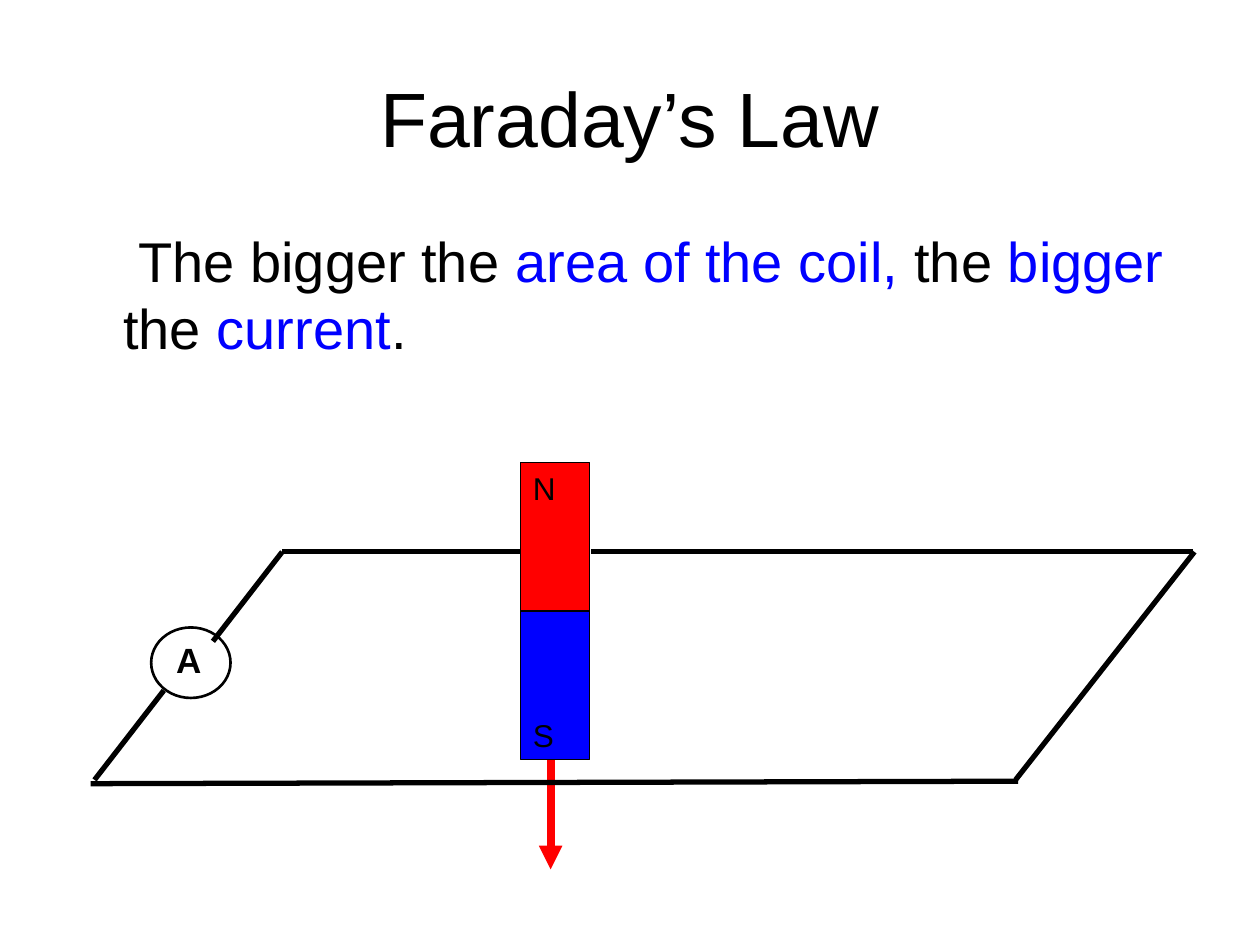
from lxml.etree import SubElement
from pptx import Presentation
from pptx.dml.color import RGBColor
from pptx.enum.shapes import MSO_CONNECTOR, MSO_SHAPE
from pptx.enum.text import MSO_ANCHOR, PP_ALIGN
from pptx.oxml.ns import qn
from pptx.util import Inches, Pt

BLACK = RGBColor(0, 0, 0)
RED = RGBColor(255, 0, 0)
BLUE = RGBColor(0, 0, 255)
FONT = "Arial"


def add_text(slide, box, runs, size, bold=False, before=0,
             align=PP_ALIGN.LEFT, anchor=MSO_ANCHOR.TOP):
    """Add a one-paragraph text box from (text, colour) runs."""
    frame = slide.shapes.add_textbox(*map(Inches, box)).text_frame
    frame.word_wrap = True
    frame.vertical_anchor = anchor
    paragraph = frame.paragraphs[0]
    paragraph.alignment = align
    paragraph.space_before = Pt(before)
    for text, color in runs:
        run = paragraph.add_run()
        run.text = text
        run.font.name = FONT
        run.font.size = Pt(size)
        run.font.bold = bold
        run.font.color.rgb = color
    return paragraph


def add_outlined(slide, preset, box, width, fill=None):
    """Add a black-outlined shape, hollow unless a fill is given."""
    shape = slide.shapes.add_shape(preset, *map(Inches, box))
    shape.shadow.inherit = False
    if fill is None:
        shape.fill.background()
    else:
        shape.fill.solid()
        shape.fill.fore_color.rgb = fill
    shape.line.color.rgb = BLACK
    shape.line.width = Pt(width)


def add_line(slide, start, end, color=BLACK, width=3, arrow=False):
    """Add a straight line, with an arrowhead at its end if asked."""
    line = slide.shapes.add_connector(
        MSO_CONNECTOR.STRAIGHT, *map(Inches, (*start, *end)))
    line.line.color.rgb = color
    line.line.width = Pt(width)
    if arrow:
        SubElement(line.line._get_or_add_ln(), qn("a:tailEnd"), type="triangle")
    SubElement(line._element.spPr, qn("a:effectLst"))


def add_magnet(slide):
    """Add the bar magnet: two equal poles with their letters."""
    left, top, width, pole_height, label_height = 4.13, 3.67, 0.55, 1.18, 0.4
    middle = top + pole_height
    bottom = middle + pole_height
    for pole_top, color in ((top, RED), (middle, BLUE)):
        add_outlined(slide, MSO_SHAPE.RECTANGLE,
                     (left, pole_top, width, pole_height), 0.75, color)
    for label_top, letter in ((top, "N"), (bottom - label_height, "S")):
        add_text(slide, (left, label_top, width, label_height),
                 [(letter, BLACK)], 18, before=2)


def add_ammeter(slide):
    """Add the ammeter in the left side of the coil."""
    add_outlined(slide, MSO_SHAPE.OVAL, (1.2, 4.98, 0.63, 0.56), 1.5)
    add_text(slide, (1.3, 5.02, 0.63, 0.43), [("A", BLACK)], 20,
             bold=True, before=2)


def main():
    prs = Presentation()
    prs.slide_width, prs.slide_height = Inches(10), Inches(7.5)
    slide = prs.slides.add_slide(prs.slide_layouts[6])

    # Direction of the magnet's motion
    add_line(slide, (4.37, 6.03), (4.37, 6.9), RED, 4.5, arrow=True)

    # Title and statement of the law
    add_text(slide, (0.5, 0.3, 9, 1.25), [("Faraday’s Law", BLACK)], 44,
             align=PP_ALIGN.CENTER, anchor=MSO_ANCHOR.MIDDLE)
    statement = add_text(slide, (0.5, 1.75, 9, 4.95), [
        ("The bigger the", BLACK),
        (" area of the coil, ", BLUE),
        ("the", BLACK),
        (" bigger ", BLUE),
        ("the ", BLACK),
        ("current", BLUE),
        (".", BLACK),
    ], 32, before=4)
    properties = statement._p.get_or_add_pPr()
    properties.set("marL", str(Inches(0.38)))
    properties.set("indent", str(Inches(0.12)))

    add_magnet(slide)

    # Coil: the back edge passes behind the magnet, the ammeter splits the left
    coil_edges = (
        ((4.13, 4.38), (2.24, 4.38)),
        ((9.47, 4.38), (4.69, 4.38)),
        ((1.69, 5.09), (2.24, 4.38)),
        ((0.75, 6.19), (1.3, 5.48)),
        ((8.06, 6.19), (9.48, 4.38)),
        ((8.08, 6.2), (0.72, 6.22)),
    )
    for start, end in coil_edges:
        add_line(slide, start, end)

    add_ammeter(slide)
    prs.save("out.pptx")


if __name__ == "__main__":
    main()
